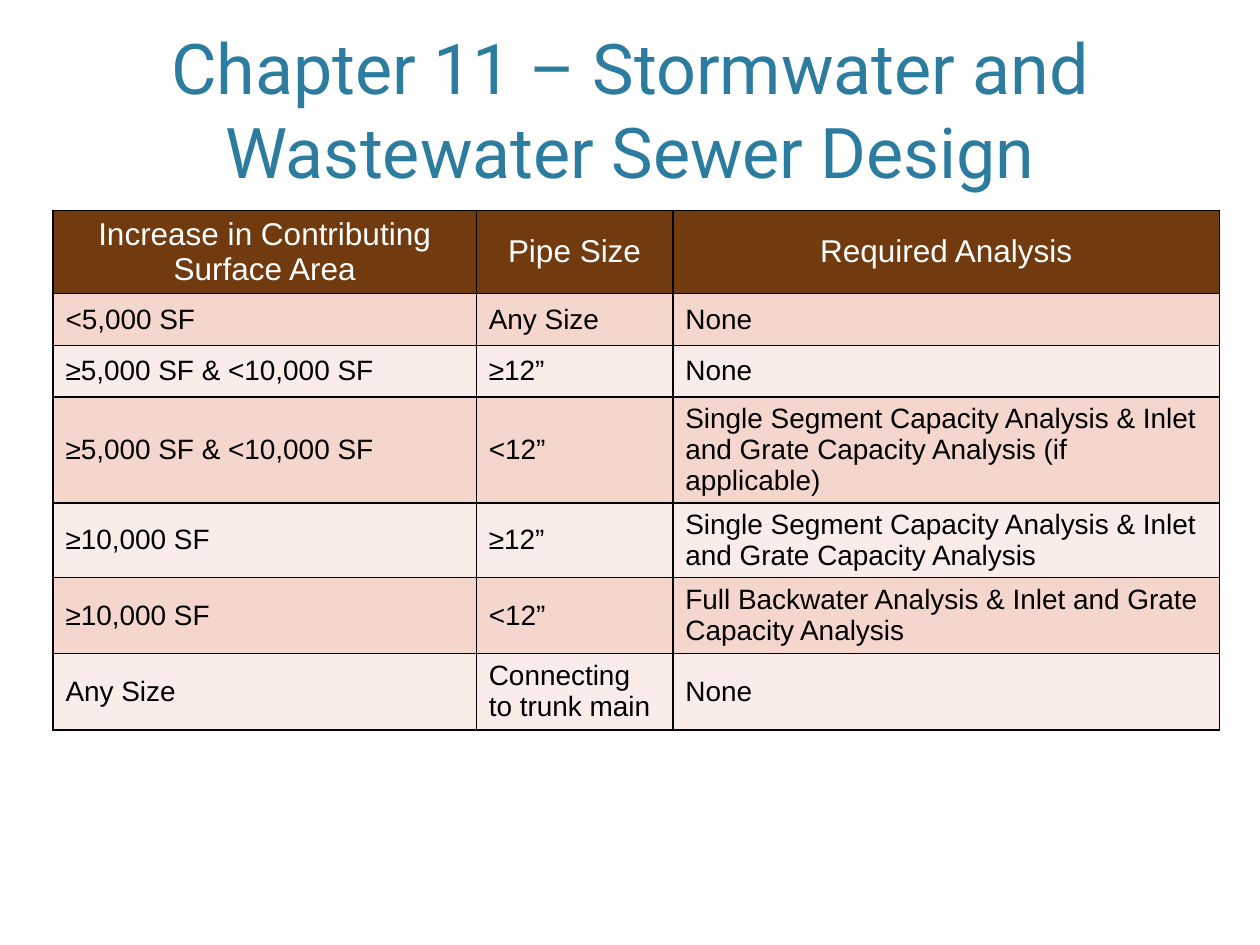
from lxml import etree
from pptx import Presentation
from pptx.dml.color import RGBColor
from pptx.enum.text import MSO_ANCHOR, MSO_AUTO_SIZE, PP_ALIGN
from pptx.oxml.ns import qn
from pptx.util import Inches, Pt

CENTER, LEFT = PP_ALIGN.CENTER, PP_ALIGN.LEFT
MIDDLE, BOTTOM, TOP = MSO_ANCHOR.MIDDLE, MSO_ANCHOR.BOTTOM, MSO_ANCHOR.TOP
NO_FIT = MSO_AUTO_SIZE.NONE

COLORS = {
    "title": "2C7C9F",
    "header": "713A0F",
    "header_text": "FFFFFF",
    "odd_row": "F4D6CD",
    "even_row": "FAECE8",
    "text": "000000",
    "border": "000000",
}
PAGE_WIDTH, PAGE_HEIGHT = 10, 7.5

# Boxes in inches: left, top, width, height
TITLE_BOX = (0.6, 0.12, 8.8, 1.46)
TABLE_BOX = (0.42, 1.67, 9.25, 4.31)
COLUMN_WIDTHS = (3.36, 1.56, 4.34)
ROW_HEIGHTS = (0.33, 0.41, 0.41, 0.53, 0.57, 0.6, 0.61)

TITLE = "Chapter 11 – Stormwater and Wastewater Sewer Design"
ANALYSIS_ROWS = (
    ("Increase in Contributing Surface Area", "Pipe Size", "Required Analysis"),
    ("<5,000 SF", "Any Size", "None"),
    ("≥5,000 SF & <10,000 SF", "≥12”", "None"),
    ("≥5,000 SF & <10,000 SF", "<12”",
     "Single Segment Capacity Analysis & Inlet and Grate Capacity Analysis (if applicable)"),
    ("≥10,000 SF", "≥12”",
     "Single Segment Capacity Analysis & Inlet and Grate Capacity Analysis"),
    ("≥10,000 SF", "<12”",
     "Full Backwater Analysis & Inlet and Grate Capacity Analysis"),
    ("Any Size", "Connecting to trunk main", "None"),
)


def rgb(name):
    return RGBColor.from_string(COLORS[name])


def write(frame, text, font, size, color, align):
    para = frame.paragraphs[0]
    para.alignment = align
    span = para.add_run()
    span.text = text
    span.font.name = font
    span.font.size = Pt(size)
    span.font.bold = False
    span.font.color.rgb = rgb(color)


def add_borders(cell):
    """Draw a 1 pt line on each side; lines must precede the cell fill."""
    properties = cell._tc.get_or_add_tcPr()
    for place, side in enumerate(("lnL", "lnR", "lnT", "lnB")):
        line = etree.Element(qn(f"a:{side}"), w=str(Pt(1)))
        fill = etree.SubElement(line, qn("a:solidFill"))
        etree.SubElement(fill, qn("a:srgbClr"), val=COLORS["border"])
        properties.insert(place, line)


def place_title(page, box):
    title = page.shapes.title
    title.left, title.top, title.width, title.height = map(Inches, box)
    frame = title.text_frame
    frame.word_wrap = True
    frame.auto_size = NO_FIT
    frame.vertical_anchor = BOTTOM
    write(frame, TITLE, "Roboto", 40, "title", CENTER)


def place_analysis_table(page, box):
    table = page.shapes.add_table(
        len(ANALYSIS_ROWS), len(COLUMN_WIDTHS), *map(Inches, box)).table
    for column, width in zip(table.columns, COLUMN_WIDTHS):
        column.width = Inches(width)
    for row, height in zip(table.rows, ROW_HEIGHTS):
        row.height = Inches(height)

    for row_index, texts in enumerate(ANALYSIS_ROWS):
        # Header style first, then alternating bands
        if row_index == 0:
            fill, style = "header", (18, "header_text", CENTER)
        else:
            fill = "odd_row" if row_index % 2 else "even_row"
            style = (16, "text", LEFT)
        for column_index, text in enumerate(texts):
            cell = table.cell(row_index, column_index)
            cell.fill.solid()
            cell.fill.fore_color.rgb = rgb(fill)
            first_cell = row_index == column_index == 0
            cell.vertical_anchor = TOP if first_cell else MIDDLE
            write(cell.text_frame, text, "Arial", *style)
            add_borders(cell)


def main():
    deck = Presentation()
    deck.slide_width, deck.slide_height = Inches(PAGE_WIDTH), Inches(PAGE_HEIGHT)
    page = deck.slides.add_slide(deck.slide_layouts.get_by_name("Title Only"))
    place_title(page, TITLE_BOX)
    place_analysis_table(page, TABLE_BOX)
    deck.save("out.pptx")


if __name__ == "__main__":
    main()
